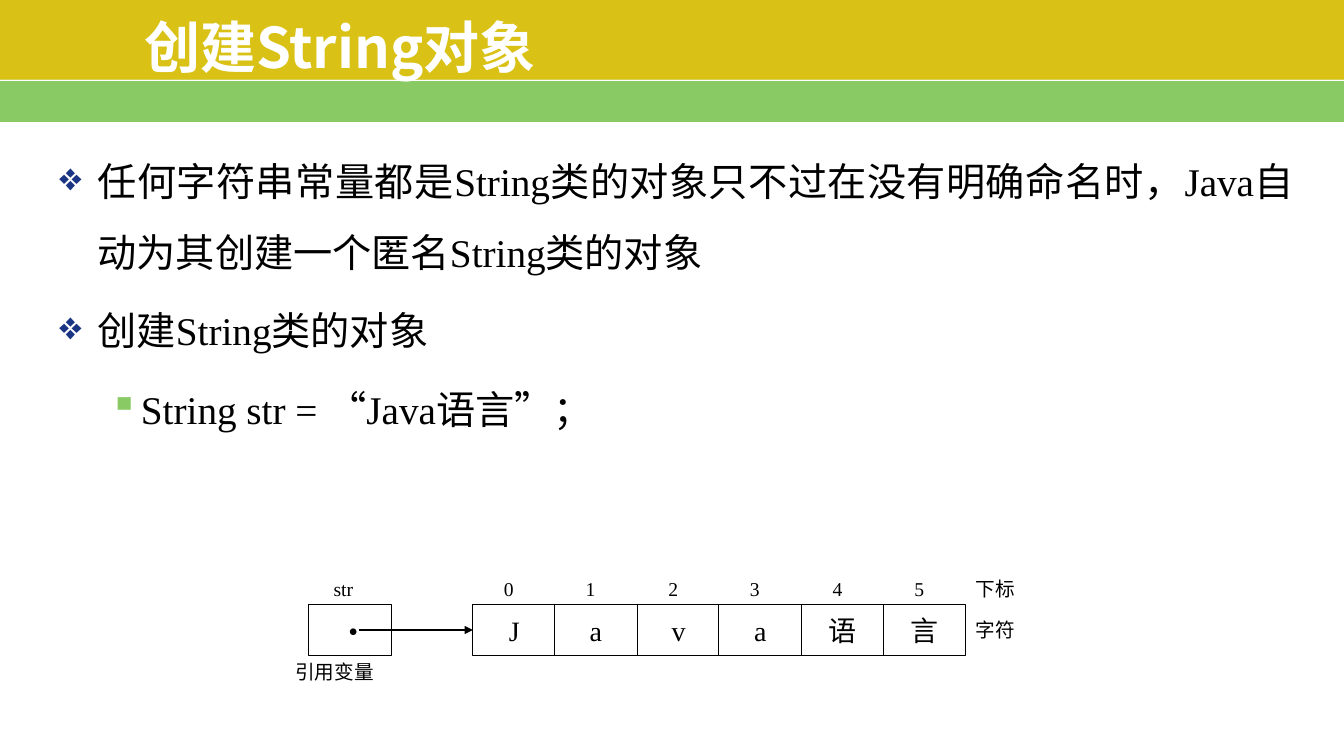
from lxml import etree
from pptx import Presentation
from pptx import util as u
from pptx.dml.color import RGBColor
from pptx.enum import shapes, text
from pptx.oxml import ns

PX = 9144  # 100 px to the inch
WIDTH, HEIGHT = 1333, 750
LATIN, CJK = "Times New Roman", "Noto Sans CJK SC"

GOLD = RGBColor(0xD9, 0xC2, 0x15)
GREEN = RGBColor(0x89, 0xCA, 0x64)
NAVY = RGBColor(0x19, 0x35, 0x83)
BLACK = RGBColor(0, 0, 0)
WHITE = RGBColor(0xFF, 0xFF, 0xFF)

POINTS = [
    (0, "任何字符串常量都是String类的对象只不过在没有明确命名时，Java自动为其创建一个匿名String类的对象"),
    (0, "创建String类的对象"),
    (1, "String str = “Java语言”；"),
]
# Per level: left margin px, hanging indent px, bullet, bullet colour
LEVELS = [(38, 38, "❖", NAVY), (81, 31, "▪", GREEN)]
CHARACTERS = "Java语言"
CELL_TOP, CELL_WIDTH, CELL_HEIGHT = 600, 82, 50
LABEL_TOP, LABEL_HEIGHT = 567, 34


def px(*lengths):
    return [u.Emu(length * PX) for length in lengths]


def format_runs(paragraph, size, color=BLACK, latin=LATIN, bold=False):
    for run in paragraph.runs:
        run.font.size = u.Pt(size)
        run.font.bold = bold
        run.font.color.rgb = color
        run.font.name = latin
        properties = run.font._element if hasattr(run.font, "_element") else run._r.get_or_add_rPr()
        east_asian = etree.SubElement(properties, ns.qn("a:ea"))
        east_asian.set("typeface", CJK)


def add_box(slide, left, top, width, height, fill, line=None):
    shape = slide.shapes.add_shape(shapes.MSO_SHAPE.RECTANGLE, *px(left, top, width, height))
    shape.shadow.inherit = False
    shape.fill.solid()
    shape.fill.fore_color.rgb = fill
    if line is None:
        shape.line.fill.background()
    else:
        shape.line.color.rgb = line
        shape.line.width = u.Pt(0.75)
    return shape


def add_cell(slide, left, content):
    shape = add_box(slide, left, CELL_TOP, CELL_WIDTH, CELL_HEIGHT, WHITE, BLACK)
    frame = shape.text_frame
    frame.text = content
    frame.vertical_anchor = text.MSO_ANCHOR.MIDDLE
    frame.paragraphs[0].alignment = text.PP_ALIGN.CENTER
    format_runs(frame.paragraphs[0], 20)
    return shape


def add_label(slide, left, top, width, content):
    frame = slide.shapes.add_textbox(*px(left, top, width, LABEL_HEIGHT)).text_frame
    frame.word_wrap = False
    frame.text = content
    format_runs(frame.paragraphs[0], 14)


def add_line(slide, start, end, color, points, arrow=False):
    line = slide.shapes.add_connector(shapes.MSO_CONNECTOR.STRAIGHT, *px(*start, *end))
    line.line.color.rgb = color
    line.line.width = u.Pt(points)
    if arrow:
        etree.SubElement(line.line._get_or_add_ln(), ns.qn("a:tailEnd")).set("type", "triangle")
    etree.SubElement(line.element.spPr, ns.qn("a:effectLst"))
    return line


def set_bullet(paragraph, level):
    margin, hanging, character, color = LEVELS[level]
    paragraph.level = level
    properties = paragraph._p.get_or_add_pPr()
    properties.set("marL", str(margin * PX))
    properties.set("indent", str(-hanging * PX))
    bullet_color = etree.SubElement(properties, ns.qn("a:buClr"))
    etree.SubElement(bullet_color, ns.qn("a:srgbClr")).set("val", str(color))
    etree.SubElement(properties, ns.qn("a:buChar")).set("char", character)


def add_header(slide):
    add_box(slide, 0, 79, WIDTH, 42, GREEN)
    add_box(slide, 0, 0, WIDTH, 79, GOLD)
    add_line(slide, (0, 80), (WIDTH, 80), WHITE, 1)

    title = slide.shapes.title
    title.left, title.top, title.width, title.height = px(133, 19, 1033, 53)
    frame = title.text_frame
    frame.text = "创建String对象"
    frame.auto_size = text.MSO_AUTO_SIZE.NONE
    frame.vertical_anchor = text.MSO_ANCHOR.MIDDLE
    frame.paragraphs[0].alignment = text.PP_ALIGN.LEFT
    format_runs(frame.paragraphs[0], 40, WHITE, CJK, bold=True)
    title.element.getparent().append(title.element)  # in front of the bands


def add_body(slide):
    frame = slide.shapes.add_textbox(*px(49, 128, 1244, 575)).text_frame
    frame.word_wrap = True
    for index, (level, content) in enumerate(POINTS):
        paragraph = frame.add_paragraph() if index else frame.paragraphs[0]
        paragraph.text = content
        set_bullet(paragraph, level)
        paragraph.alignment = text.PP_ALIGN.JUSTIFY
        paragraph.line_spacing = 1.5
        if index:
            paragraph.space_before = u.Pt(5.6)
        format_runs(paragraph, 28)


def add_diagram(slide):
    # Reference variable
    add_cell(slide, 306, " •")
    add_label(slide, 321, LABEL_TOP, 40, "str")
    add_label(slide, 283, 650, 99, "引用变量")

    # Characters with their indices
    cells = []
    for index, character in enumerate(CHARACTERS):
        offset = index * 163 // 2
        cells.append(add_cell(slide, 469 + offset, character))
        add_label(slide, 490 + offset, LABEL_TOP, 30, str(index))
    add_label(slide, 958, LABEL_TOP, 59, "下标")
    add_label(slide, 958, 608, 59, "字符")

    # Reference arrow
    arrow = add_line(slide, (356, 625), (469, 625), BLACK, 0.75, arrow=True)
    arrow.end_connect(cells[0], 1)


def main():
    presentation = Presentation()
    presentation.slide_width, presentation.slide_height = px(WIDTH, HEIGHT)
    slide = presentation.slides.add_slide(presentation.slide_layouts[5])
    add_header(slide)
    add_body(slide)
    add_diagram(slide)
    presentation.save("out.pptx")


if __name__ == "__main__":
    main()
